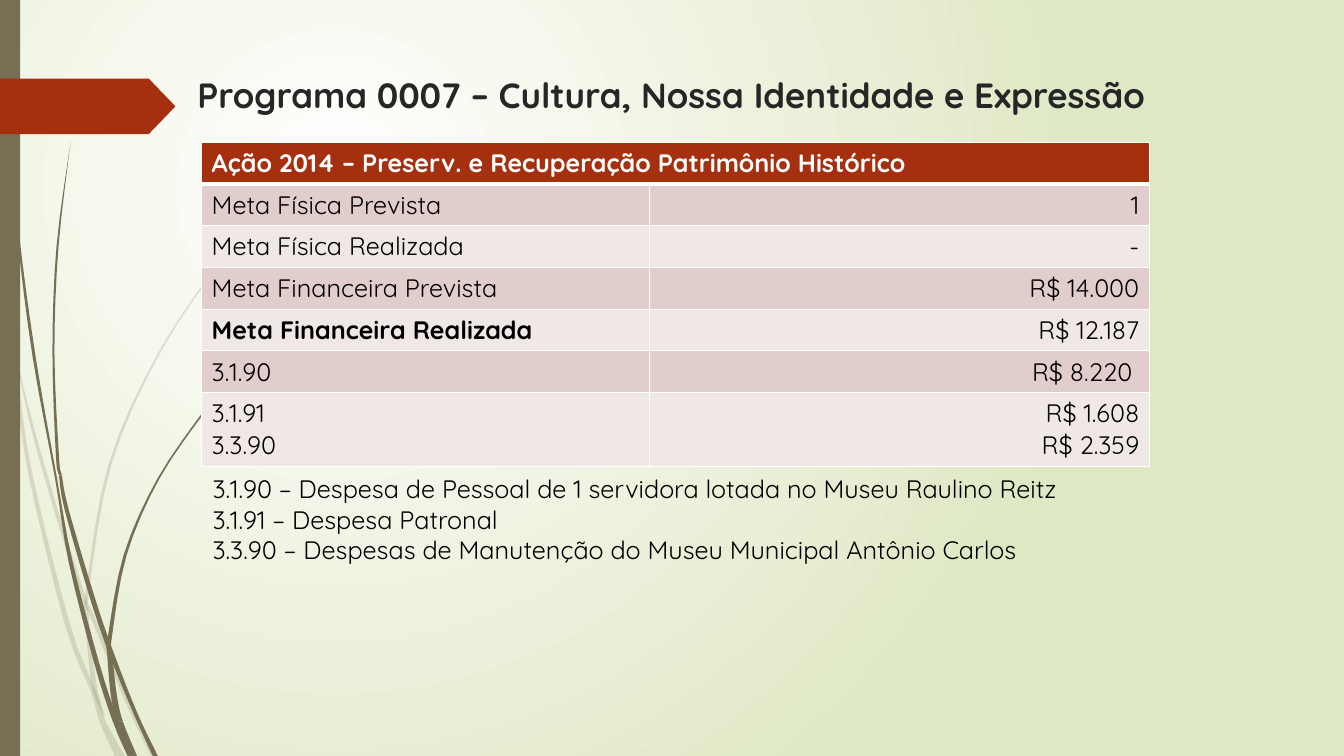
from lxml.etree import SubElement
from pptx import Presentation
from pptx.dml.color import RGBColor
from pptx.enum.shapes import MSO_SHAPE
from pptx.enum.text import MSO_ANCHOR, PP_ALIGN
from pptx.oxml import parse_xml
from pptx.oxml.ns import nsdecls, qn
from pptx.util import Inches, Pt

TITLE = "Programa 0007 – Cultura, Nossa Identidade e Expressão"
HEADING = "Ação 2014 – Preserv. e Recuperação Patrimônio Histórico"
GOALS = [
    (["Meta Física Prevista"], ["1"]),
    (["Meta Física Realizada"], ["-"]),
    (["Meta Financeira Prevista"], ["R$ 14.000"]),
    (["Meta Financeira Realizada"], ["R$ 12.187"]),
    (["3.1.90"], ["R$ 8.220 "]),
    (["3.1.91", "3.3.90"], ["R$ 1.608", "R$ 2.359"]),
]
BOLD_LABEL = "Meta Financeira Realizada"
NOTES = [
    "3.1.90 – Despesa de Pessoal de 1 servidora lotada no Museu Raulino Reitz",
    "3.1.91 – Despesa Patronal",
    "3.3.90 – Despesas de Manutenção do Museu Municipal Antônio Carlos",
]
PALE_BLADES = [
    ([(0, 2.9, .02), (.1, 3.46, .02), (.16, 3.76, .03), (.3, 4.7, .04), (.67, 6.2, .05),
      (.93, 6.87, .05), (1.01, 7.14, .06), (1.19, 7.5, .1)], (1, 6)),
    ([(.14, 3.45, 0), (.32, 4.24, .03), (.6, 5.21, .04), (.84, 5.95, .04), (.9, 6.08, .04),
      (1.25, 6.93, .04), (1.52, 7.5, .05)], (3,)),
    ([(3.12, 1.53, .01), (2.68, 1.98, .02), (2.29, 2.45, .02), (1.59, 3.48, .02),
      (1.09, 4.61, .03), (.87, 5.84, .03), (.86, 6.1, .04), (.89, 6.46, .04),
      (.94, 6.83, .05), (1.03, 7.1, .02)], (5,)),
]
DARK_BLADES = [
    ([(.04, 0, .01), (.07, 1.1, .01), (.18, 2.33, .02), (.34, 3.55, .03), (.56, 4.77, .02),
      (.7, 5.57, .04), (.96, 6.58, .05), (1.15, 7.16, .06), (1.31, 7.5, .09)], (4, 7)),
    ([(.7, 1.41, 0), (.57, 2.45, .02), (.53, 3.49, .02), (.57, 4.53, .03), (.6, 4.72, .03),
      (.66, 5.05, .04), (.91, 5.91, .05), (1.1, 6.47, .05), (1.34, 7.07, .04),
      (1.54, 7.5, .05)], (4, 7)),
    ([(2.6, 3.44, .01), (2.31, 3.74, .02), (2.05, 4.05, .02), (1.57, 4.75, .02),
      (1.24, 5.51, .03), (1.09, 6.32, .04), (1.09, 6.5, .05), (1.13, 6.9, .06),
      (1.19, 7.16, .06), (1.32, 7.5, .08)], (5, 8)),
]

OLIVE = RGBColor(0x76, 0x6F, 0x54)
RUST = RGBColor(0xA5, 0x30, 0x10)
ROSE = RGBColor(0xE1, 0xCD, 0xCC)
BLUSH = RGBColor(0xF0, 0xE8, 0xE7)
WHITE = RGBColor(0xFF, 0xFF, 0xFF)
LIME = RGBColor(0xDF, 0xE8, 0xC4)
INK = RGBColor(0x26, 0x26, 0x26)
BLACK = RGBColor(0, 0, 0)
FONT = "Quicksand"
WIDTH, HEIGHT = 13.33, 7.5
ROW_HEIGHT, LAST_ROW = 2.9 / 7, .73
COLUMNS = (4.44, 4.96)
STEPS = 4


def smooth(points):
    """Return a Catmull-Rom curve through points of x, y and width."""
    ends = [points[0], *points, points[-1]]
    curve = []
    for around in zip(ends, ends[1:], ends[2:], ends[3:]):
        for step in range(STEPS):
            t = step / STEPS
            curve.append([
                q + t * (r - p + t * (2 * p - 5 * q + 4 * r - s + t * (3 * q - p - 3 * r + s))) / 2
                for p, q, r, s in zip(*around)])
    return curve + [points[-1]]


def paint(shape, color, alpha=None):
    """Give a shape a plain fill with no line or shadow."""
    shape.shadow.inherit = False
    shape.fill.solid()
    shape.fill.fore_color.rgb = color
    shape.line.fill.background()
    if alpha:
        fill = shape.element.spPr.find(qn("a:solidFill"))
        SubElement(fill[0], qn("a:alpha"), val=str(alpha * 1000))


def add_blade(page, points, cuts, alpha=None):
    """Draw one tapered blade of grass in sections that meet at the cuts."""
    curve = smooth(points)
    for first, last in zip((0, *cuts), (*cuts, len(points) - 1)):
        section = curve[first * STEPS:last * STEPS + 1]
        outline = [(x - w / 2, y) for x, y, w in section]
        outline += [(x + w / 2, y) for x, y, w in reversed(section)]
        corners = [(Inches(x), Inches(y)) for x, y in outline]
        builder = page.shapes.build_freeform(*corners[0])
        builder.add_line_segments(corners[1:], close=True)
        paint(builder.convert_to_shape(), OLIVE, alpha)


def write(frame, lines, size, color, bold=False, align=PP_ALIGN.LEFT):
    """Write lines as paragraphs in one style."""
    frame.word_wrap = True
    for number, line in enumerate(lines):
        para = frame.add_paragraph() if number else frame.paragraphs[0]
        para.text = line
        para.alignment = align
        para.font.name = FONT
        para.font.size = Pt(size)
        para.font.bold = bold
        para.font.color.rgb = color


def add_text(page, bounds, lines, size, color, bold=False):
    """Add a top-anchored text box."""
    box = page.shapes.add_textbox(*map(Inches, bounds))
    box.text_frame.vertical_anchor = MSO_ANCHOR.TOP
    write(box.text_frame, lines, size, color, bold)


def style_cell(cell, color, bottom=1):
    """Fill a cell and rule its edges in white."""
    cell.fill.solid()
    cell.fill.fore_color.rgb = color
    properties = cell._tc.get_or_add_tcPr()
    for index, side in enumerate("LRTB"):
        points = bottom if side == "B" else 1
        properties.insert(index, parse_xml(
            f'<a:ln{side} {nsdecls("a")} w="{Pt(points)}"><a:solidFill>'
            f'<a:srgbClr val="{WHITE}"/></a:solidFill></a:ln{side}>'))


def add_background(page):
    """Spread a round gradient from the upper left."""
    fill = page.background.fill
    fill.gradient()
    for stop, color in zip(fill.gradient_stops, (WHITE, LIME)):
        stop.color.rgb = color
    gradient = next(page.element.iter(qn("a:gradFill")))
    gradient.replace(gradient.find(qn("a:lin")), parse_xml(
        f'<a:path {nsdecls("a")} path="circle">'
        '<a:fillToRect l="50000" t="50000" r="100000" b="100000"/></a:path>'))


def add_goals(page):
    """Add the table of goals under its merged heading."""
    height = ROW_HEIGHT * len(GOALS) + LAST_ROW
    frame = page.shapes.add_table(len(GOALS) + 1, 2, Inches(2), Inches(1.41),
                                  Inches(sum(COLUMNS)), Inches(height))
    table = frame.table
    for column, width in zip(table.columns, COLUMNS):
        column.width = Inches(width)
    for row in table.rows:
        row.height = Inches(ROW_HEIGHT)
    row.height = Inches(LAST_ROW)
    heading = table.cell(0, 0)
    heading.merge(table.cell(0, 1))
    write(heading.text_frame, [HEADING], 18, WHITE, bold=True)
    for column in range(2):
        style_cell(table.cell(0, column), RUST, bottom=3)
    for number, goal in enumerate(GOALS, 1):
        for column, align in enumerate((PP_ALIGN.LEFT, PP_ALIGN.RIGHT)):
            cell = table.cell(number, column)
            style_cell(cell, ROSE if number % 2 else BLUSH)
            write(cell.text_frame, goal[column], 18, BLACK, BOLD_LABEL in goal[column], align)


def main():
    """Build the slide and save it."""
    deck = Presentation()
    deck.slide_width, deck.slide_height = Inches(WIDTH), Inches(HEIGHT)
    page = deck.slides.add_slide(deck.slide_layouts[6])
    add_background(page)
    for points, cuts in PALE_BLADES:
        add_blade(page, points, cuts, alpha=20)
    for points, cuts in DARK_BLADES:
        add_blade(page, points, cuts)
    bar = page.shapes.add_shape(MSO_SHAPE.RECTANGLE, 0, 0, Inches(.2), Inches(HEIGHT))
    paint(bar, OLIVE)
    arrow = page.shapes.add_shape(MSO_SHAPE.PENTAGON, 0, Inches(.78), Inches(1.74), Inches(.55))
    arrow.adjustments[0] = .48
    paint(arrow, RUST)
    add_text(page, (1.86, .68, 10.72, .78), [TITLE], 25, INK, bold=True)
    add_goals(page)
    add_text(page, (2.01, 4.65, 9.5, 1.62), NOTES, 18, BLACK)
    deck.save("out.pptx")


if __name__ == "__main__":
    main()
